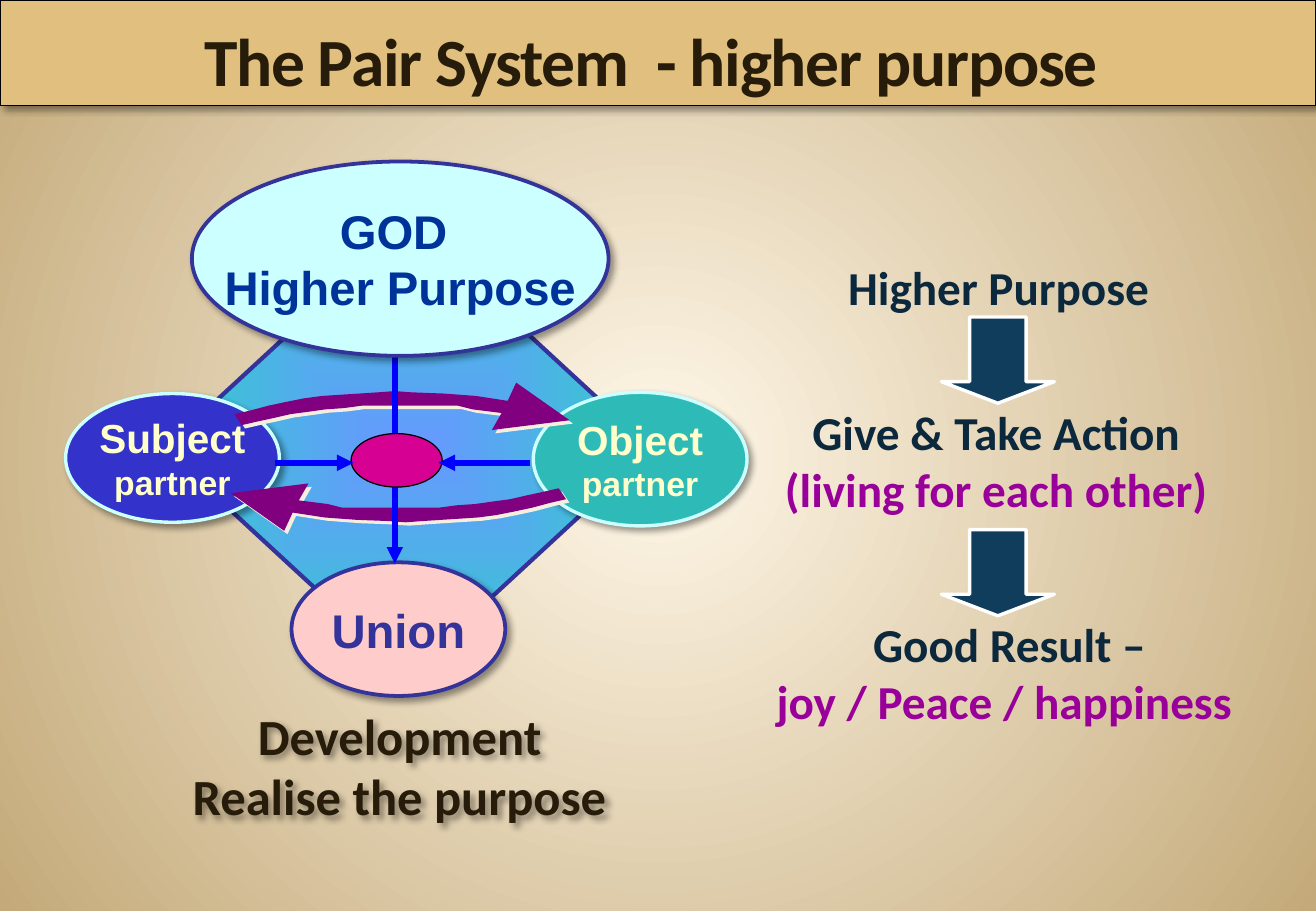
from pptx import Presentation
from pptx import util as u
from pptx.dml.color import RGBColor
from pptx.enum import shapes, text
from pptx.oxml import parse_xml
from pptx.oxml.ns import nsdecls, qn

COLS, ROWS = 65, 45
CELL = u.Inches(1) // 6
SOFT = ("000000", 40, 4, 3)
CREAM = ("F7EEDD", 100, 0, 2.8)
GIVE_ARROW = [
    (413, 340), (389, 337), (377, 334), (364, 334), (337, 334), (313, 334),
    (298, 334), (283, 336), (268, 337), (254, 339), (239, 341), (226, 344),
    (212, 347), (199, 350), (193, 341), (206, 338), (221, 334), (235, 331),
    (250, 328), (265, 326), (280, 325), (296, 324), (311, 323), (325, 322),
    (339, 323), (365, 324), (379, 325), (392, 326), (418, 330), (425, 315),
    (469, 346), (405, 354)]
TAKE_ARROW = [(659 - x, 752 - y) for x, y in GIVE_ARROW]


def rgb(color):
    return RGBColor.from_string(color)


def grid(*cells):
    return [u.Emu(round(c * CELL)) for c in cells]


def paint(sp, fill, line=None, width=0, shadow=None):
    sp.fill.solid()
    sp.fill.fore_color.rgb = rgb(fill)
    if line:
        sp.line.color.rgb = rgb(line)
        sp.line.width = u.Pt(width)
    else:
        sp.line.fill.background()
    cast_shadow(sp, shadow)


def cast_shadow(sp, shadow):
    sp.shadow.inherit = False
    if shadow:
        color, alpha, blur, dist = shadow
        effects = sp.element.spPr.find(qn("a:effectLst"))
        effects.append(parse_xml(
            f'<a:outerShdw {nsdecls("a")} blurRad="{u.Pt(blur)}" '
            f'dist="{u.Pt(dist)}" dir="2700000" algn="ctr" rotWithShape="0">'
            f'<a:srgbClr val="{color}"><a:alpha val="{alpha * 1000}"/>'
            '</a:srgbClr></a:outerShdw>'))


def radiate(parent, kind, inner, outer):
    parent.replace(parent.find(qn("a:solidFill")), parse_xml(
        f'<a:gradFill {nsdecls("a")} rotWithShape="1"><a:gsLst>'
        f'<a:gs pos="0"><a:srgbClr val="{inner}"/></a:gs>'
        f'<a:gs pos="100000"><a:srgbClr val="{outer}"/></a:gs></a:gsLst>'
        f'<a:path path="{kind}"><a:fillToRect l="50000" t="50000" '
        'r="50000" b="50000"/></a:path></a:gradFill>'))


def write(sp, lines, font, wrap=True, anchor=text.MSO_ANCHOR.MIDDLE):
    tf = sp.text_frame
    tf.word_wrap = wrap
    tf.vertical_anchor = anchor
    for i, (words, size, color) in enumerate(lines):
        p = tf.add_paragraph() if i else tf.paragraphs[0]
        p.text = words
        p.alignment = text.PP_ALIGN.CENTER
        p.font.name = font
        p.font.size = u.Pt(size)
        p.font.bold = True
        p.font.color.rgb = rgb(color)


def add_ellipse(s, box, fill, line, width, lines=(), shadow=SOFT):
    sp = s.shapes.add_shape(shapes.MSO_SHAPE.OVAL, *grid(*box))
    paint(sp, fill, line, width, shadow)
    write(sp, lines, "Arial", wrap=False)


def add_curved_arrow(s, points):
    builder = s.shapes.build_freeform(*points[0], scale=u.Inches(0.01))
    builder.add_line_segments(points[1:], close=True)
    paint(builder.convert_to_shape(), "800080", shadow=CREAM)


def add_link(s, *ends):
    sp = s.shapes.add_connector(shapes.MSO_CONNECTOR.STRAIGHT, *grid(*ends))
    sp.line.color.rgb = rgb("0000FF")
    sp.line.width = u.Pt(3.25)
    sp.line.fill.solid()
    sp.line.color.rgb = rgb("0000FF")
    spPr = sp.element.spPr
    spPr.find(qn("a:ln")).append(
        parse_xml(f'<a:tailEnd {nsdecls("a")} type="triangle"/>'))
    spPr.append(parse_xml(f'<a:effectLst {nsdecls("a")}/>'))


def add_label(s, box, lines):
    sp = s.shapes.add_textbox(*grid(*box))
    write(sp, lines, "Calibri", anchor=text.MSO_ANCHOR.TOP)
    return sp


def add_step_arrow(s, top):
    sp = s.shapes.add_shape(shapes.MSO_SHAPE.DOWN_ARROW, *grid(46.5, top, 5.58, 4.26))
    sp.adjustments[1] = 0.25
    paint(sp, "113D5C", "FFFFFF", 2)


def add_header(s):
    sp = s.shapes.add_shape(shapes.MSO_SHAPE.RECTANGLE, *grid(0, 0, COLS, 5.22))
    paint(sp, "E1BF7E", "000000", 0.75, SOFT)
    write(sp, [("The Pair System  - higher purpose ", 40, "261C09")], "Calibri",
          anchor=text.MSO_ANCHOR.BOTTOM)
    for props in sp.element.iter(qn("a:defRPr")):
        props.set("spc", "-70")


def add_pair_diagram(s):
    diamond = s.shapes.add_shape(shapes.MSO_SHAPE.DIAMOND, *grid(8.1, 11.04, 24.12, 22.26))
    paint(diamond, "6699FF", "333399", 2.5)
    radiate(diamond.element.spPr, "rect", "6699FF", "33CCCC")
    add_ellipse(s, (3.24, 19.44, 10.56, 6.36), "3333CC", "CCFFFF", 2,
                [("Subject", 24, "FFFFCC"), ("partner", 20, "FFFFCC")])
    add_ellipse(s, (26.34, 19.38, 10.56, 6.6), "2EBBB8", "CCFFFF", 2,
                [("Object", 24, "FFFFCC"), ("partner", 20, "FFFFCC")])
    for points in (GIVE_ARROW, TAKE_ARROW):
        add_curved_arrow(s, points)
    add_ellipse(s, (14.4, 27.78, 10.56, 6.6), "FFCCCC", "333399", 2.25,
                [("Union", 28, "333399")])
    add_link(s, 19.5, 16.14, 19.5, 27.84)
    add_ellipse(s, (17.34, 21.42, 4.5, 2.64), "D60093", "000000", 0.75, shadow=None)
    add_link(s, 13.56, 22.86, 17.46, 22.86)
    add_link(s, 26.16, 22.86, 21.66, 22.86)
    add_ellipse(s, (9.48, 7.98, 20.58, 9.6), "CCFFFF", "333399", 2.25,
                [("GOD ", 28, "003399"), ("Higher Purpose", 28, "003399")])
    caption = add_label(s, (7.5, 34.5, 24.48, 6.66),
                        [("Development", 30, "261C09"),
                         ("Realise the purpose", 30, "261C09")])
    cast_shadow(caption, SOFT)


def add_steps(s):
    navy, purple = "0C283D", "990099"
    add_label(s, (34.14, 12.48, 30.36, 3.42), [("Higher Purpose", 28, navy)])
    add_label(s, (34.02, 19.62, 30.36, 6.24),
              [("Give & Take Action", 28, navy),
               ("(living for each other)", 28, purple)])
    add_label(s, (34.68, 30.12, 30.36, 6.24),
              [("Good Result –", 28, navy),
               ("joy / Peace / happiness ", 28, purple)])
    for top in (15.66, 26.16):
        add_step_arrow(s, top)


def main():
    prs = Presentation()
    prs.slide_width, prs.slide_height = grid(COLS, ROWS)
    s = prs.slides.add_slide(prs.slide_layouts[6])
    s.background.fill.solid()
    radiate(s.element.find(".//" + qn("p:bgPr")), "circle", "FFF7E8", "C4AA7A")
    add_pair_diagram(s)
    add_steps(s)
    add_header(s)
    prs.save("out.pptx")


if __name__ == "__main__":
    main()
